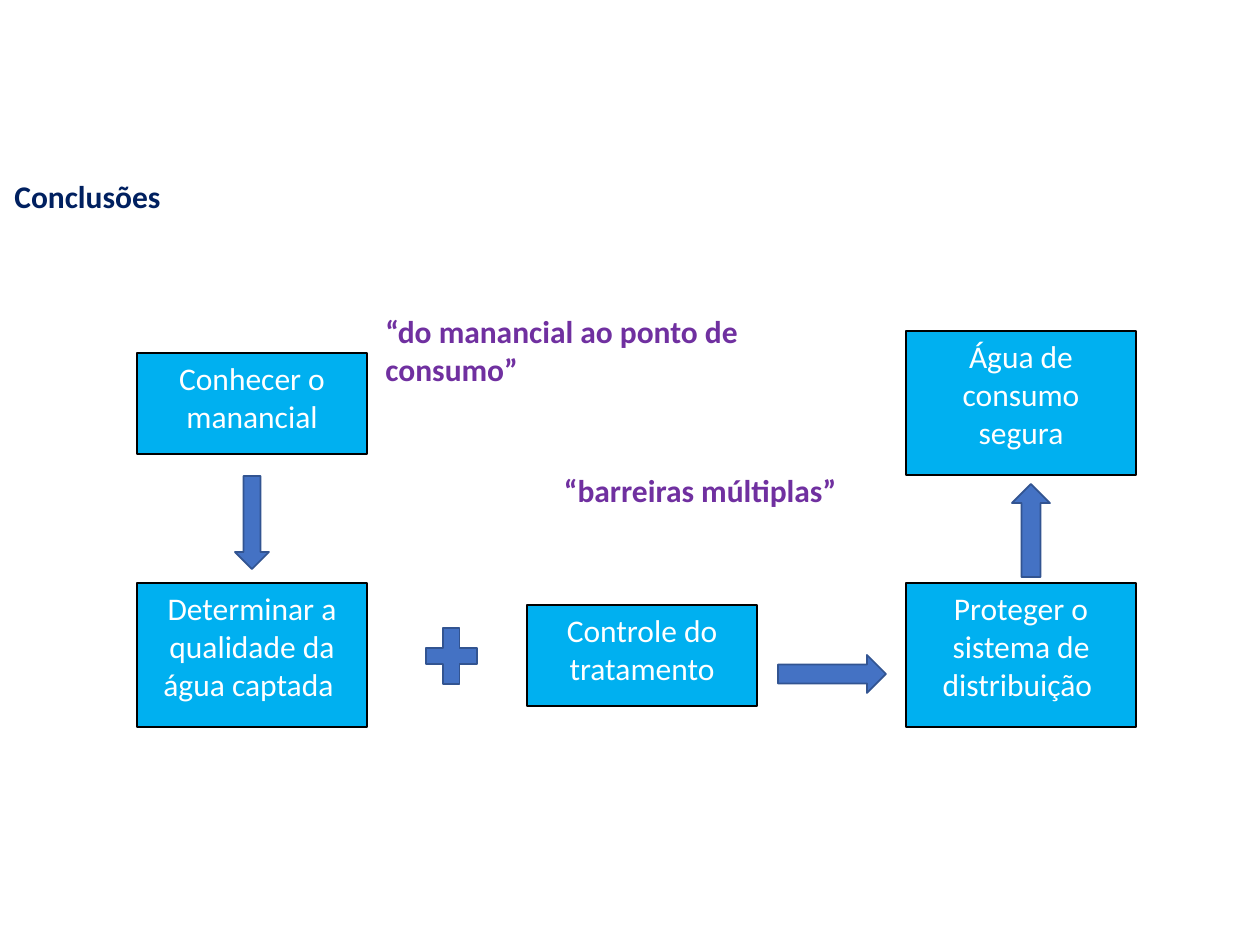
"""Build the conclusions slide: a flow from water source to safe drinking water."""
from pptx import Presentation
from pptx.dml.color import RGBColor
from pptx.enum.shapes import MSO_SHAPE
from pptx.enum.text import MSO_ANCHOR, PP_ALIGN
from pptx.util import Emu, Pt

SCALE = 914400 / 126
SKY = RGBColor(0x00, 0xB0, 0xF0)
BLUE = RGBColor(0x44, 0x72, 0xC4)
BLUE_EDGE = RGBColor(0x32, 0x54, 0x91)
BLACK = RGBColor(0x00, 0x00, 0x00)
WHITE = RGBColor(0xFF, 0xFF, 0xFF)
PURPLE = RGBColor(0x70, 0x30, 0xA0)
NAVY = RGBColor(0x00, 0x20, 0x60)

BOX_WIDTH, SHORT, TALL = 230, 101, 144
LEFT, MIDDLE, RIGHT = 137, 527, 906


def px(*lengths):
    return [Emu(round(length * SCALE)) for length in lengths]


def write(shape, text, color, alignment, bold=False):
    frame = shape.text_frame
    frame.word_wrap = True
    frame.vertical_anchor = MSO_ANCHOR.TOP
    paragraph = frame.paragraphs[0]
    paragraph.alignment = alignment
    run = paragraph.add_run()
    run.text = text
    run.font.name = "Calibri"
    run.font.size = Pt(18)
    run.font.bold = bold
    run.font.color.rgb = color


presentation = Presentation()
presentation.slide_width, presentation.slide_height = px(1260, 945)
slide = presentation.slides.add_slide(presentation.slide_layouts[6])

steps = [
    ("Conhecer o manancial", LEFT, 353, SHORT),
    ("Determinar a qualidade da água captada ", LEFT, 583, TALL),
    ("Controle do tratamento", MIDDLE, 605, SHORT),
    ("Proteger o sistema de distribuição ", RIGHT, 583, TALL),
    ("Água de consumo segura", RIGHT, 331, TALL),
]
for text, left, top, height in steps:
    box = slide.shapes.add_shape(MSO_SHAPE.RECTANGLE, *px(left, top, BOX_WIDTH, height))
    box.shadow.inherit = False
    box.fill.solid()
    box.fill.fore_color.rgb = SKY
    box.line.color.rgb = BLACK
    box.line.width = Pt(0.75)
    write(box, text, WHITE, PP_ALIGN.CENTER)

signs = [
    (MSO_SHAPE.DOWN_ARROW, 235, 476, 34, 93),
    (MSO_SHAPE.MATH_PLUS, 417, 618, 69, 76),
    (MSO_SHAPE.RIGHT_ARROW, 778, 655, 108, 38),
    (MSO_SHAPE.UP_ARROW, 1012, 484, 38, 93),
]
for kind, *place in signs:
    sign = slide.shapes.add_shape(kind, *px(*place))
    sign.shadow.inherit = False
    sign.fill.solid()
    sign.fill.fore_color.rgb = BLUE
    sign.line.color.rgb = BLUE_EDGE
    sign.line.width = Pt(1)

labels = [
    ("“do manancial ao ponto de consumo”", PURPLE, PP_ALIGN.LEFT, 373, 306, 485, 101),
    ("“barreiras múltiplas”", PURPLE, PP_ALIGN.RIGHT, 380, 465, 469, 58),
    ("Conclusões", NAVY, PP_ALIGN.LEFT, 2, 171, 233, 50),
]
for text, color, alignment, *place in labels:
    label = slide.shapes.add_textbox(*px(*place))
    write(label, text, color, alignment, bold=True)

presentation.save("out.pptx")
